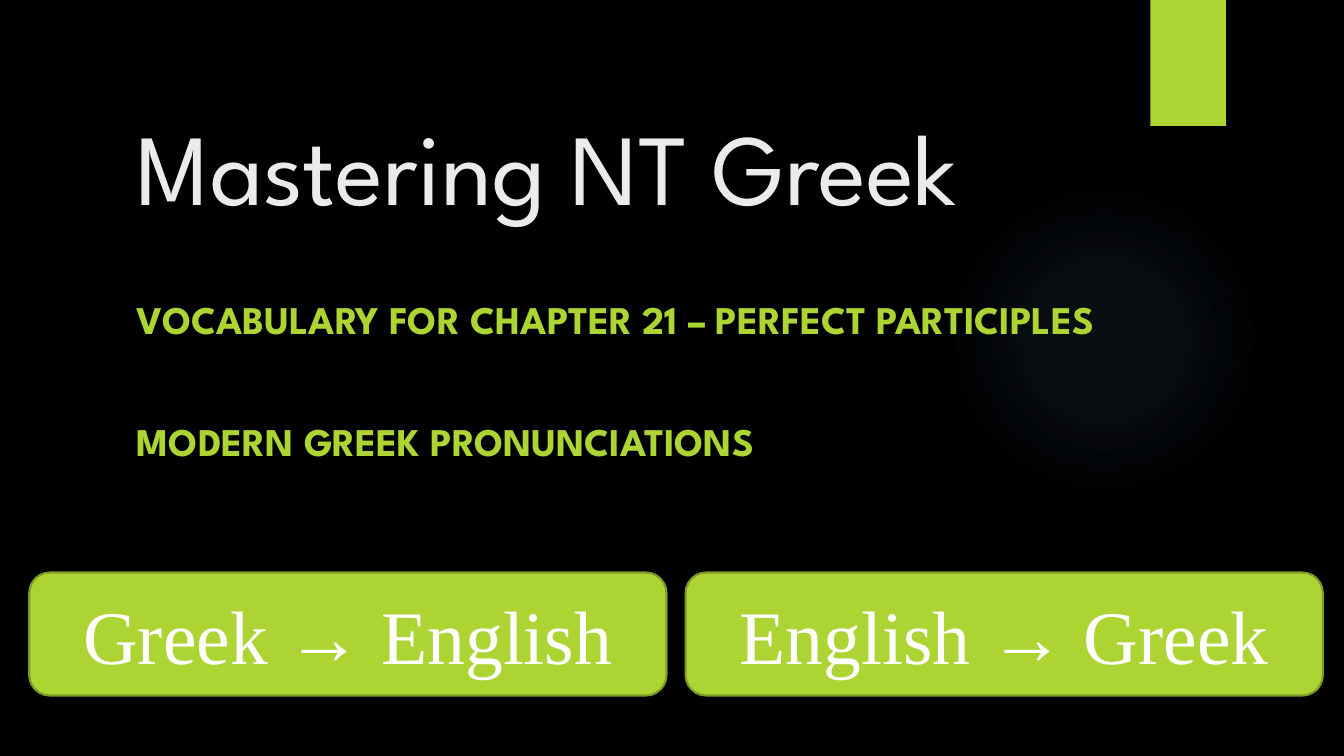
from lxml import etree
from pptx import Presentation
from pptx.dml.color import RGBColor
from pptx.enum.shapes import MSO_SHAPE
from pptx.enum.text import MSO_ANCHOR, PP_ALIGN
from pptx.oxml import parse_xml
from pptx.oxml.ns import qn
from pptx.util import Inches, Pt

OVAL = MSO_SHAPE.OVAL
RECTANGLE = MSO_SHAPE.RECTANGLE
ROUNDED = MSO_SHAPE.ROUNDED_RECTANGLE
TOP, MIDDLE, BOTTOM = MSO_ANCHOR.TOP, MSO_ANCHOR.MIDDLE, MSO_ANCHOR.BOTTOM
LEFT, CENTER = PP_ALIGN.LEFT, PP_ALIGN.CENTER
DRAWING = "http://schemas.openxmlformats.org/drawingml/2006/main"

COLORS = {
    "black": "000000",
    "glow": "7AC4F0",
    "lime": "ACD433",
    "olive": "7F9D26",
    "title": "EBEBEB",
    "white": "FFFFFF",
}
TITLE = {"name": "League Spartan", "size": Pt(72), "bold": False}
SUBTITLE = {"name": "League Spartan", "size": Pt(28), "bold": True}
BUTTON = {"name": "Times New Roman", "size": Pt(54), "bold": False}


def rgb(color):
    return RGBColor.from_string(COLORS[color])


def write(shape, lines, font, color, anchor, align, **spacing):
    frame = shape.text_frame
    frame.word_wrap = True
    frame.vertical_anchor = anchor
    for index, line in enumerate(lines):
        para = frame.add_paragraph() if index else frame.paragraphs[0]
        para.alignment = align
        for name, value in spacing.items():
            if index or name != "space_before":
                setattr(para, name, value)
        span = para.add_run()
        span.text = line
        for name, value in font.items():
            setattr(span.font, name, value)
        span.font.color.rgb = rgb(color)


def add_text(page, place, lines, font, color, anchor, **spacing):
    box = page.shapes.add_textbox(*map(Inches, place))
    write(box, lines, font, color, anchor, LEFT, **spacing)


def add_block(page, kind, place, fill, line=None):
    shape = page.shapes.add_shape(kind, *map(Inches, place))
    shape.shadow.inherit = False
    shape.fill.solid()
    shape.fill.fore_color.rgb = rgb(fill)
    if line:
        shape.line.color.rgb = rgb(line)
        shape.line.width = Pt(1.5)
    else:
        shape.line.fill.background()
    return shape


def add_glow(page, place):
    glow = add_block(page, OVAL, place, "glow")
    stops = "".join(
        f'<a:gs pos="{position * 1000}"><a:srgbClr val="{COLORS["glow"]}">'
        f'<a:alpha val="{alpha * 1000}"/></a:srgbClr></a:gs>'
        for position, alpha in ((0, 7), (36, 6), (69, 0), (100, 0))
    )
    gradient = parse_xml(
        f'<a:gradFill xmlns:a="{DRAWING}"><a:gsLst>{stops}</a:gsLst>'
        '<a:path path="circle"><a:fillToRect l="50000" t="50000" '
        'r="50000" b="50000"/></a:path></a:gradFill>'
    )
    properties = glow.element.spPr
    properties.replace(properties.find(qn("a:solidFill")), gradient)


def add_ribbon(page, place):
    ribbon = add_block(page, RECTANGLE, place, "lime")
    effects = ribbon.element.spPr.find(qn("a:effectLst"))
    shadow = etree.SubElement(
        effects, qn("a:outerShdw"),
        blurRad=str(Pt(3)), dist=str(Pt(2)), dir="5400000", rotWithShape="0",
    )
    color = etree.SubElement(shadow, qn("a:srgbClr"), val=COLORS["black"])
    etree.SubElement(color, qn("a:alpha"), val="45000")


def add_button(page, left, label):
    button = add_block(page, ROUNDED, (left, 5.68, 6.32, 1.22), "lime", "olive")
    write(button, [label], BUTTON, "white", MIDDLE, CENTER)


def main():
    deck = Presentation()
    deck.slide_width, deck.slide_height = Inches(13.33), Inches(7.5)
    page = deck.slides.add_slide(deck.slide_layouts[6])
    page.background.fill.solid()
    page.background.fill.fore_color.rgb = rgb("black")

    add_glow(page, (9.41, 1.83, 3.08, 3.08))
    add_ribbon(page, (11.41, 0, 0.75, 1.25))
    add_text(page, (1.26, 0.7, 10.04, 1.59), ["Mastering NT Greek"],
             TITLE, "title", BOTTOM)
    add_text(page, (1.26, 2.88, 10.43, 2.69),
             ["VOCABULARY FOR CHAPTER 21 – PERFECT PARTICIPLES",
              "MODERN GREEK PRONUNCIATIONS"],
             SUBTITLE, "lime", TOP, space_before=Pt(53), line_spacing=Pt(34))
    add_button(page, 6.8, "English → Greek")
    add_button(page, 0.29, "Greek → English")
    deck.save("out.pptx")


if __name__ == "__main__":
    main()
